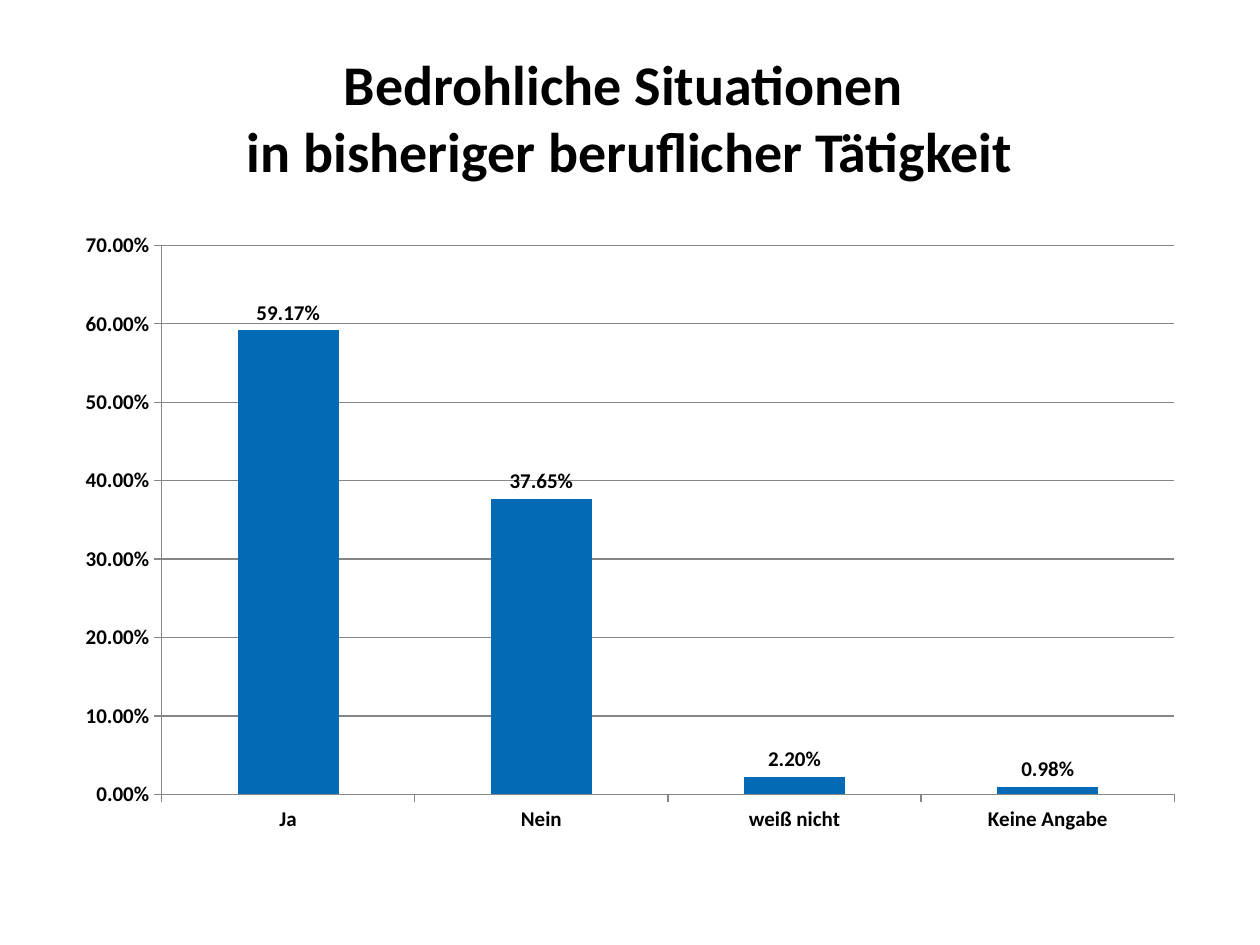
from pptx import Presentation
from pptx.chart.data import CategoryChartData
from pptx.dml.color import RGBColor
from pptx.enum.chart import XL_CHART_TYPE, XL_LABEL_POSITION, XL_TICK_MARK
from pptx.enum.text import MSO_ANCHOR, PP_ALIGN
from pptx.util import Inches, Pt

BLACK = RGBColor(0x00, 0x00, 0x00)
BLUE = RGBColor(0x03, 0x6A, 0xB5)
GRAY = RGBColor(0x86, 0x86, 0x86)
FONT = "Calibri"
PERCENT = "0.00%"
ANSWERS = {"Ja": 0.5917, "Nein": 0.3765, "weiß nicht": 0.022, "Keine Angabe": 0.0098}


def format_font(font, size):
    font.name = FONT
    font.size = Pt(size)
    font.bold = True
    font.color.rgb = BLACK


def place_title(slide, left, top, width, height):
    title = slide.shapes.title
    title.left, title.top, title.width, title.height = left, top, width, height
    frame = title.text_frame
    frame.word_wrap = True
    frame.vertical_anchor = MSO_ANCHOR.MIDDLE
    paragraph = frame.paragraphs[0]
    paragraph.alignment = PP_ALIGN.CENTER
    lines = ["Bedrohliche Situationen ", "in bisheriger beruflicher Tätigkeit"]
    for index, line in enumerate(lines):
        if index:
            paragraph.add_line_break()
        run = paragraph.add_run()
        run.text = line
        format_font(run.font, 32)


def place_answer_chart(slide, left, top, width, height):
    data = CategoryChartData(number_format=PERCENT)
    data.categories = list(ANSWERS)
    data.add_series("Series 1", list(ANSWERS.values()))
    chart = slide.shapes.add_chart(
        XL_CHART_TYPE.COLUMN_CLUSTERED, left, top, width, height, data
    ).chart
    chart.has_legend = False
    chart.has_title = False
    format_font(chart.font, 12)

    # Axes and gridlines
    for axis in (chart.category_axis, chart.value_axis):
        axis.major_tick_mark = XL_TICK_MARK.OUTSIDE
        axis.minor_tick_mark = XL_TICK_MARK.NONE
        axis.format.line.color.rgb = GRAY
        axis.format.line.width = Pt(0.75)
    value_axis = chart.value_axis
    value_axis.minimum_scale = 0
    value_axis.maximum_scale = 0.7
    value_axis.major_unit = 0.1
    value_axis.tick_labels.number_format = PERCENT
    value_axis.tick_labels.number_format_is_linked = False
    value_axis.has_major_gridlines = True
    gridline = value_axis.major_gridlines.format.line
    gridline.color.rgb = GRAY
    gridline.width = Pt(0.75)

    # Columns and their labels
    plot = chart.plots[0]
    plot.gap_width = 150
    plot.vary_by_categories = False
    fill = plot.series[0].format.fill
    fill.solid()
    fill.fore_color.rgb = BLUE
    plot.has_data_labels = True
    labels = plot.data_labels
    labels.show_value = True
    labels.number_format = PERCENT
    labels.number_format_is_linked = False
    labels.position = XL_LABEL_POSITION.OUTSIDE_END
    format_font(labels.font, 12)


def main():
    presentation = Presentation()
    presentation.slide_width = Inches(10)
    presentation.slide_height = Inches(7.5)
    slide = presentation.slides.add_slide(presentation.slide_layouts[5])
    place_title(slide, Inches(0.5), Inches(0.3), Inches(9), Inches(1.25))
    place_answer_chart(slide, Inches(0.5), Inches(1.75), Inches(9), Inches(4.95))
    presentation.save("out.pptx")


if __name__ == "__main__":
    main()
